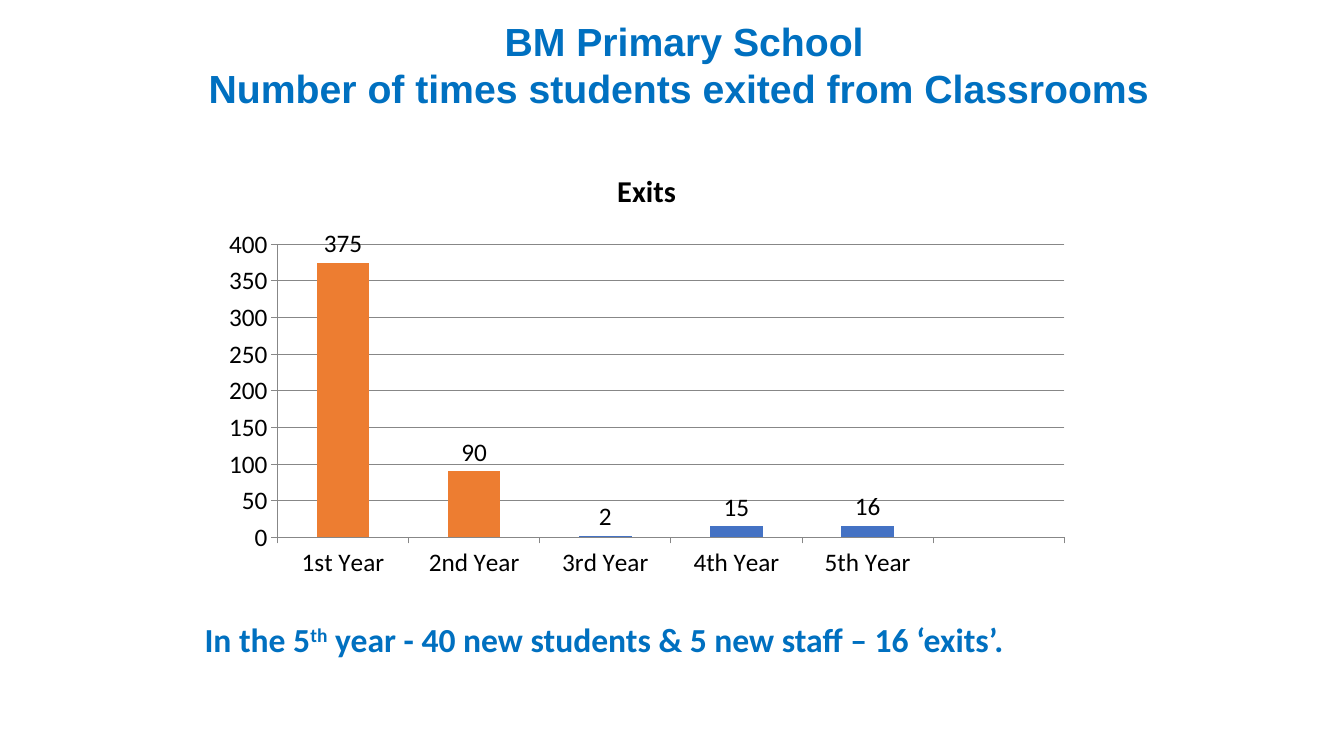
"""Build a slide charting classroom exits over five school years."""
from dataclasses import dataclass
from typing import Any

from pptx import Presentation
from pptx.chart.data import CategoryChartData as ChartData
from pptx.dml.color import RGBColor
from pptx.enum.chart import XL_CHART_TYPE as ChartType
from pptx.enum.chart import XL_LABEL_POSITION as LabelPosition
from pptx.enum.chart import XL_TICK_MARK as TickMark
from pptx.enum.text import MSO_ANCHOR as Anchor
from pptx.enum.text import MSO_AUTO_SIZE as AutoSize
from pptx.enum.text import PP_ALIGN as Align
from pptx.util import Inches, Pt


@dataclass(frozen=True)
class Theme:
    heading_font: str = "Arial"
    body_font: str = "Calibri"
    accent: str = "0070C0"
    text: str = "000000"
    line: str = "878787"
    bar: str = "4472C4"
    early_bar: str = "ED7D31"
    title_size: float = 28
    caption_size: float = 24
    chart_title_size: float = 21.6
    chart_size: float = 18
    line_width: float = 0.75


@dataclass(frozen=True)
class Region:
    """A rectangle in percent of the slide's width and height."""
    left: float
    top: float
    width: float
    height: float

    def lengths(self) -> dict[str, int]:
        return {
            "left": round(WIDTH * self.left / 100),
            "top": round(HEIGHT * self.top / 100),
            "width": round(WIDTH * self.width / 100),
            "height": round(HEIGHT * self.height / 100),
        }


@dataclass(frozen=True)
class Span:
    text: str
    raised: bool = False


@dataclass(frozen=True)
class Year:
    name: str
    exits: int | None
    early: bool = False


THEME = Theme()
WIDTH, HEIGHT = Inches(13.33), Inches(7.5)
TITLE_REGION = Region(14.33, 1.6, 73.14, 13.87)
CHART_REGION = Region(15.75, 19.87, 64.74, 57.73)
CAPTION_REGION = Region(14.48, 81.2, 62.42, 14.8)
TITLE = [
    [Span("BM Primary School")],
    [Span("Number of times students exited from Classrooms ")],
]
CAPTION = [[
    Span("In the 5"),
    Span("th", raised=True),
    Span(" year - 40 new students & 5 new staff – 16 ‘exits’."),
]]
YEARS = [
    Year("1st Year", 375, early=True),
    Year("2nd Year", 90, early=True),
    Year("3rd Year", 2),
    Year("4th Year", 15),
    Year("5th Year", 16),
    Year("", None),
]


def apply(target: Any, values: dict[str, Any]) -> None:
    for name, value in values.items():
        setattr(target, name, value)


def style_font(font: Any, name: str, size: float, color: str, bold: bool) -> None:
    apply(font, {"name": name, "size": Pt(size), "bold": bold})
    font.color.rgb = RGBColor.from_string(color)


def fill_solid(fill: Any, color: str) -> None:
    fill.solid()
    fill.fore_color.rgb = RGBColor.from_string(color)


def style_line(line: Any) -> None:
    line.width = Pt(THEME.line_width)
    line.color.rgb = RGBColor.from_string(THEME.line)


def write(box: Any, rows: list[list[Span]], font: str, size: float,
          align: Align, anchor: Anchor) -> None:
    frame = box.text_frame
    apply(frame, {"word_wrap": False, "auto_size": AutoSize.NONE,
                  "vertical_anchor": anchor})
    for index, row in enumerate(rows):
        para = frame.add_paragraph() if index else frame.paragraphs[0]
        para.alignment = align
        for part in row:
            span = para.add_run()
            span.text = part.text
            style_font(span.font, font, size, THEME.accent, True)
            if part.raised:
                span._r.get_or_add_rPr().set("baseline", "30000")


def add_exits_chart(page: Any) -> None:
    data = ChartData()
    data.categories = [year.name for year in YEARS]
    data.add_series("Exits", [year.exits for year in YEARS])
    region = CHART_REGION.lengths()
    chart = page.shapes.add_chart(
        ChartType.COLUMN_CLUSTERED, region["left"], region["top"],
        region["width"], region["height"], data).chart
    apply(chart, {"has_legend": False, "has_title": True})
    style_font(chart.font, THEME.body_font, THEME.chart_size, THEME.text, False)

    chart.chart_title.include_in_layout = False
    para = chart.chart_title.text_frame.paragraphs[0]
    span = para.add_run()
    span.text = "Exits"
    style_font(span.font, THEME.body_font, THEME.chart_title_size, THEME.text, True)

    for axis in (chart.category_axis, chart.value_axis):
        apply(axis, {"major_tick_mark": TickMark.OUTSIDE,
                     "minor_tick_mark": TickMark.NONE})
        style_line(axis.format.line)
    apply(chart.value_axis, {"minimum_scale": 0, "maximum_scale": 400,
                             "major_unit": 50, "has_major_gridlines": True})
    style_line(chart.value_axis.major_gridlines.format.line)

    plot = chart.plots[0]
    apply(plot, {"gap_width": 150, "vary_by_categories": False})
    bars = plot.series[0]
    fill_solid(bars.format.fill, THEME.bar)
    for index, year in enumerate(YEARS):
        if year.early:
            fill_solid(bars.points[index].format.fill, THEME.early_bar)
    apply(bars.data_labels, {"show_value": True,
                             "position": LabelPosition.OUTSIDE_END})


def main() -> None:
    deck = Presentation()
    apply(deck, {"slide_width": WIDTH, "slide_height": HEIGHT})
    page = deck.slides.add_slide(deck.slide_layouts.get_by_name("Title Only"))
    title = page.shapes.title
    apply(title, TITLE_REGION.lengths())
    write(title, TITLE, THEME.heading_font, THEME.title_size,
          Align.CENTER, Anchor.MIDDLE)
    add_exits_chart(page)
    caption = page.shapes.add_textbox(**CAPTION_REGION.lengths())
    write(caption, CAPTION, THEME.body_font, THEME.caption_size,
          Align.LEFT, Anchor.TOP)
    deck.save("out.pptx")


if __name__ == "__main__":
    main()
